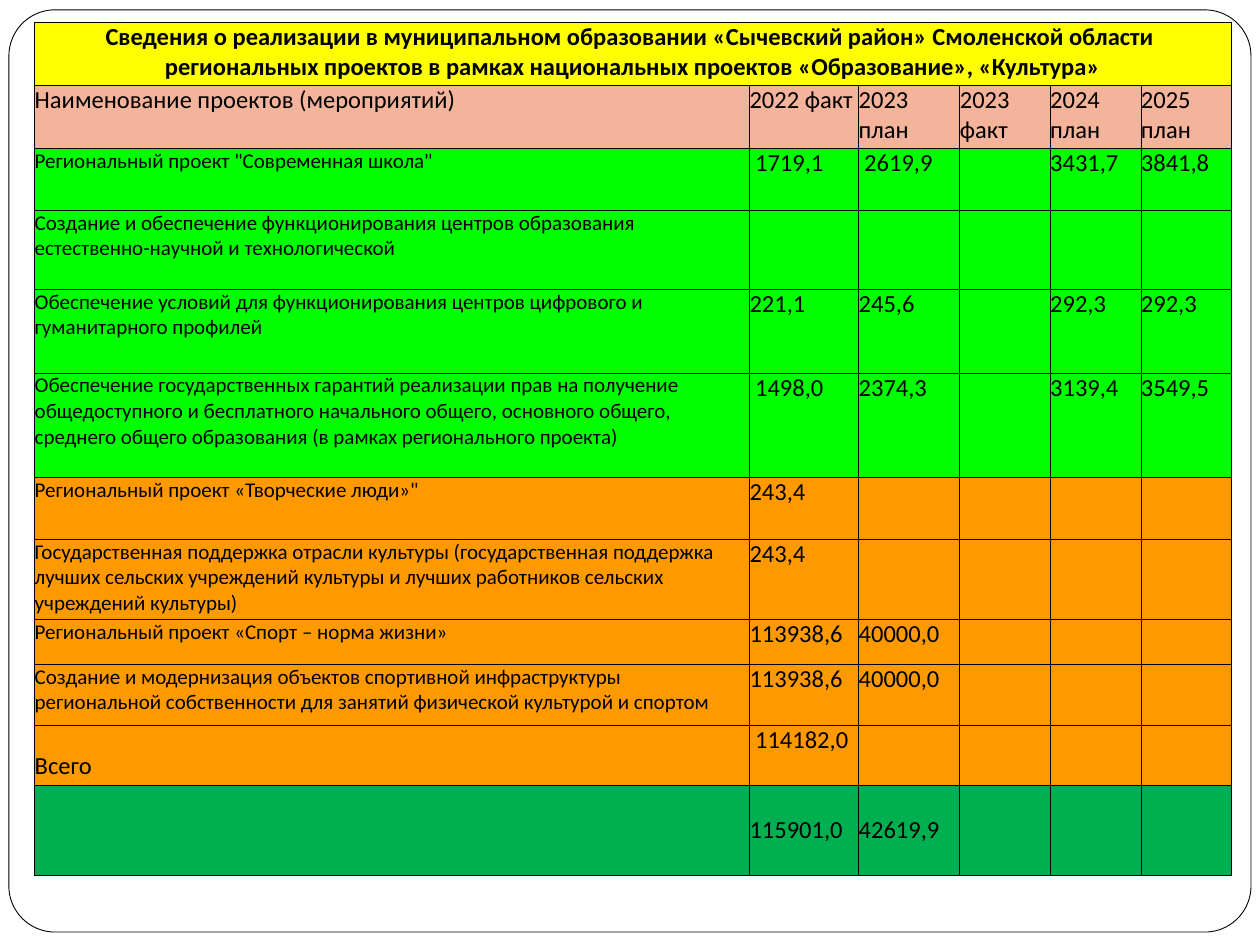
from dataclasses import dataclass

from lxml import etree
from pptx import Presentation
from pptx import util as u
from pptx.dml.color import RGBColor
from pptx.enum import shapes, text
from pptx.oxml import ns


@dataclass(frozen=True)
class Theme:
    font: str = "Calibri"
    ink: str = "000000"
    paper: str = "FFFFFF"
    heading: str = "FFFF00"
    columns: str = "F4B39B"
    school: str = "00FF00"
    culture: str = "FF9900"
    total: str = "00B050"
    large: int = 14
    small: int = 12
    rule: float = 0.5


def write(frame, content, *, theme, size, bold=False, align=text.PP_ALIGN.LEFT):
    frame.word_wrap = True
    for index, line in enumerate(content.split("\n")):
        paragraph = frame.paragraphs[0] if index == 0 else frame.add_paragraph()
        paragraph.alignment = align
        run = paragraph.add_run()
        run.text = line
        run.font.name = theme.font
        run.font.size = u.Pt(size)
        run.font.bold = bold
        run.font.color.rgb = RGBColor.from_string(theme.ink)


class Page:
    def __init__(self, slide, theme):
        self.slide = slide
        self.theme = theme

    def frame(self, left, top, width, height, corner):
        border = self.slide.shapes.add_shape(
            shapes.MSO_SHAPE.ROUNDED_RECTANGLE,
            u.Cm(left), u.Cm(top), u.Cm(width), u.Cm(height))
        border.adjustments[0] = corner
        border.shadow.inherit = False
        border.fill.solid()
        border.fill.fore_color.rgb = RGBColor.from_string(self.theme.paper)
        border.line.color.rgb = RGBColor.from_string(self.theme.ink)
        border.line.width = u.Pt(self.theme.rule)

    def table(self, left, top, widths, heights):
        grid = self.slide.shapes.add_table(
            len(heights), len(widths), u.Cm(left), u.Cm(top),
            u.Cm(sum(widths)), u.Cm(sum(heights))).table
        grid.first_row = grid.horz_banding = False
        for column, width in zip(grid.columns, widths):
            column.width = u.Cm(width)
        for row, height in zip(grid.rows, heights):
            row.height = u.Cm(height)
        return grid

    def cell(self, cell, content, fill, drop=0, **style):
        cell.margin_left = cell.margin_right = cell.margin_bottom = 0
        cell.margin_top = u.Cm(drop)
        self.borders(cell)
        cell.fill.solid()
        cell.fill.fore_color.rgb = RGBColor.from_string(fill)
        if content:
            write(cell.text_frame, content, theme=self.theme, **style)

    def borders(self, cell):
        properties = cell._tc.get_or_add_tcPr()
        for side in ("a:lnL", "a:lnR", "a:lnT", "a:lnB"):
            edge = etree.SubElement(properties, ns.qn(side), w=str(u.Pt(self.theme.rule)))
            paint = etree.SubElement(edge, ns.qn("a:solidFill"))
            etree.SubElement(paint, ns.qn("a:srgbClr"), val=self.theme.ink)


HEADING = (
    "Сведения о реализации в муниципальном образовании «Сычевский район» Смоленской области \n"
    "региональных проектов в рамках национальных проектов «Образование», «Культура»")
YEARS = ("2022 факт", "2023 план", "2023 факт", "2024 план", "2025 план")
SCHOOL = (
    ('Региональный проект "Современная школа"',
     " 1719,1", " 2619,9", "", "3431,7", "3841,8"),
    ("Создание и обеспечение функционирования центров образования "
     "естественно-научной и технологической",),
    ("Обеспечение условий для функционирования центров цифрового и гуманитарного профилей",
     "221,1", "245,6", "", "292,3", "292,3"),
    ("Обеспечение государственных гарантий реализации прав на получение общедоступного и "
     "бесплатного начального общего, основного общего, среднего общего образования "
     "(в рамках регионального проекта)",
     " 1498,0", "2374,3", "", "3139,4", "3549,5"),
)
CULTURE = (
    ('Региональный проект «Творческие люди»"', "243,4"),
    ("Государственная поддержка отрасли культуры (государственная поддержка лучших сельских "
     "учреждений культуры и лучших работников сельских учреждений культуры)", "243,4"),
    ("Региональный проект «Спорт – норма жизни»", "113938,6", "40000,0"),
    ("Создание и модернизация объектов спортивной инфраструктуры региональной собственности "
     "для занятий физической культурой и спортом", "113938,6", "40000,0"),
)
SUBTOTAL = ("Всего", " 114182,0")
TOTAL = ("", "115901,0", "42619,9")

WIDTHS = (14.41, 2.2, 2.04, 1.82, 1.83, 1.82)
HEIGHTS = (1.27, 1.27, 1.25, 1.59, 1.69, 2.1, 1.25, 1.61, 0.91, 1.23, 1.21, 1.81)


def main():
    theme = Theme()
    deck = Presentation()
    deck.slide_width, deck.slide_height = u.Cm(25.4), u.Cm(19.05)
    page = Page(deck.slides.add_slide(deck.slide_layouts[6]), theme)
    page.frame(0.18, 0.2, 25.04, 18.59, 0.05)

    projects = page.table(0.7, 0.45, WIDTHS, HEIGHTS)
    for column in range(len(WIDTHS)):
        page.cell(projects.cell(0, column), HEADING if column == 0 else "", theme.heading,
                  size=theme.large, bold=True, align=text.PP_ALIGN.CENTER)
    projects.cell(0, 0).merge(projects.cell(0, len(WIDTHS) - 1))

    lines = [(("Наименование проектов (мероприятий)", *YEARS), theme.columns, theme.large, 0, 0)]
    lines += [(line, theme.school, theme.small, 0, 0) for line in SCHOOL]
    lines += [(line, theme.culture, theme.small, 0, 0) for line in CULTURE]
    lines += [(SUBTOTAL, theme.culture, theme.large, 0.52, 0),
              (TOTAL, theme.total, theme.large, 0, 0.6)]

    for row, (line, fill, name_size, name_drop, value_drop) in enumerate(lines, start=1):
        for column in range(len(WIDTHS)):
            content = line[column] if column < len(line) else ""
            is_name = column == 0
            page.cell(projects.cell(row, column), content, fill,
                      drop=name_drop if is_name else value_drop,
                      size=name_size if is_name else theme.large)

    deck.save("out.pptx")


if __name__ == "__main__":
    main()
